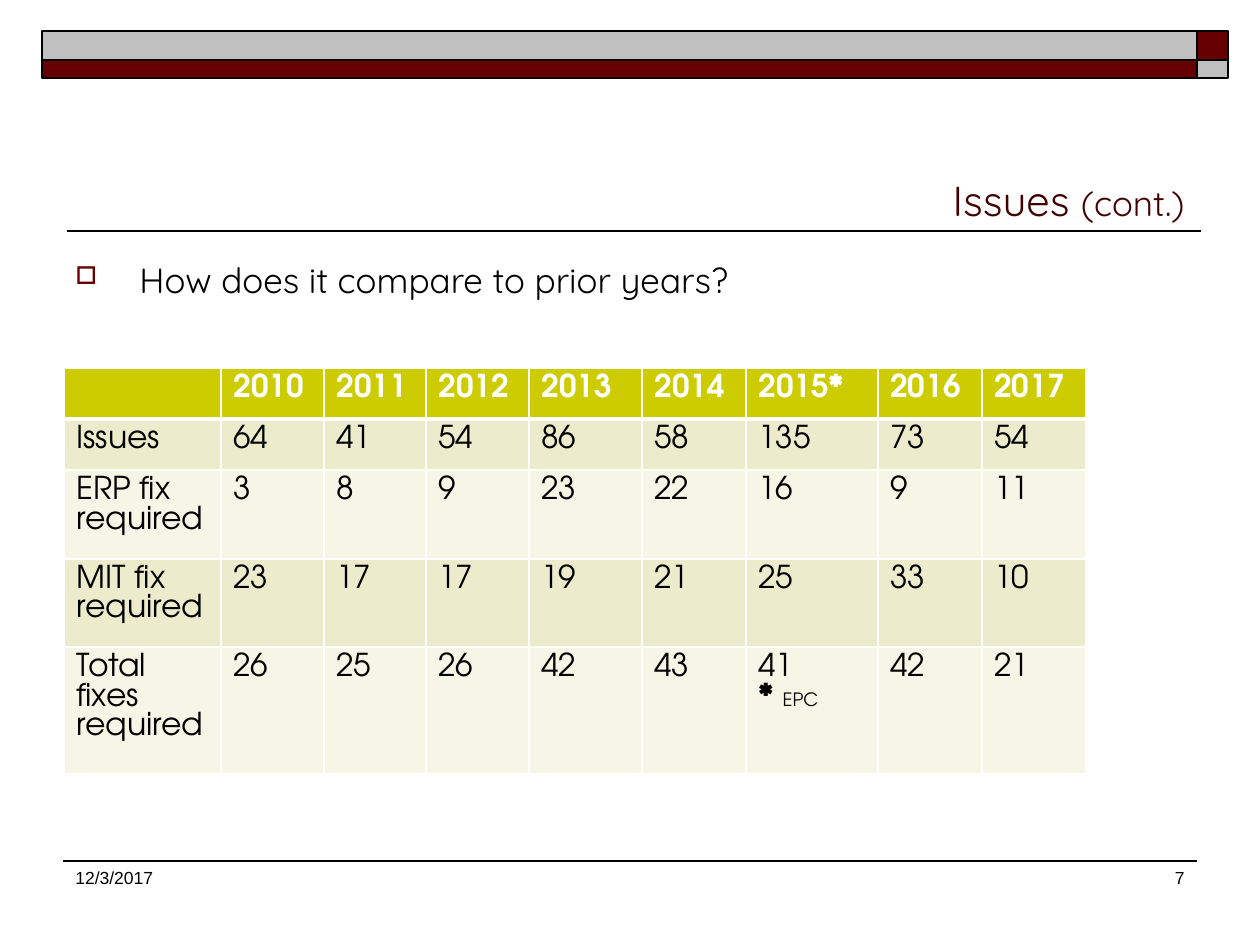
"""Build the slide that compares issues and fixes across years."""
from lxml.etree import SubElement
from pptx import Presentation
from pptx.dml.color import RGBColor
from pptx.enum.shapes import MSO_CONNECTOR, MSO_SHAPE
from pptx.enum.text import MSO_ANCHOR as Anchor, PP_ALIGN as Align
from pptx.oxml import parse_xml
from pptx.oxml.ns import nsdecls, qn
from pptx.util import Pt

PX = 914400 / 126
COLORS = {
    "maroon": "660000", "gray": "C0C0C0", "black": "000000", "white": "FFFFFF",
    "title": "420000", "header": "CCCC00", "odd": "ECECCC", "even": "F6F6E7",
}
HEADING = {"name": "Quicksand", "size": 24, "color": "title"}
BODY = {"name": "Quicksand", "size": 20, "color": "black"}
FOOTER = {"name": "Arial", "size": 10, "color": "black"}
CELL = {"name": "TeX Gyre Adventor", "size": 18, "color": "black", "bold": False}
HEADER = {**CELL, "color": "white", "bold": True}
NOTE = {**CELL, "size": 10.5}

BAND_X, BAND_Y = (42, 1197, 1228), (31, 60, 78)
BAND_FILLS = [("gray", "maroon"), ("maroon", "gray")]
RULES = [(67, 1201, 231, 1), (63, 1197, 861, 0.75)]
TEXTS = [
    ((63, 73, 1134, 158), Anchor.BOTTOM, Align.RIGHT,
     [("Issues ", HEADING), ("(cont.)", {**HEADING, "size": 20})]),
    ((63, 252, 1134, 592), Anchor.TOP, Align.LEFT,
     [("How does it compare to prior years?", BODY)]),
    ((63, 861, 231, 63), Anchor.TOP, Align.LEFT, [("12/3/2017", FOOTER)]),
    ((935, 861, 262, 63), Anchor.TOP, Align.RIGHT, [("7", FOOTER)]),
]
BULLETED = 1
TABLE_AT = (64, 368)
COLUMNS = [157, 103, 102, 103, 113, 104, 132, 104, 104]
ROWS = [51, 51, 89, 88, 125]
TABLE = [
    ["", "2010", "2011", "2012", "2013", "2014", "2015*", "2016", "2017"],
    ["Issues", "64", "41", "54", "86", "58", "135", "73", "54"],
    ["ERP fix required", "3", "8", "9", "23", "22", "16", "9", "11"],
    ["MIT fix required", "23", "17", "17", "19", "21", "25", "33", "10"],
    ["Total fixes required", "26", "25", "26", "42", "43", "41", "42", "21"],
]
FOOTNOTE_CELL = (4, 6)
FOOTNOTE = [("* ", {**CELL, "bold": True}), ("EPC", NOTE)]


def px(*values):
    return [round(value * PX) for value in values]


def rgb(name):
    return RGBColor.from_string(COLORS[name])


def add_runs(paragraph, runs):
    for text, style in runs:
        run = paragraph.add_run()
        run.text = text
        for key, value in style.items():
            if key == "color":
                run.font.color.rgb = rgb(value)
            else:
                setattr(run.font, key, Pt(value) if key == "size" else value)


def add_bullet(paragraph):
    properties = paragraph._p.get_or_add_pPr()
    indent = px(64)[0]
    properties.set("marL", str(indent))
    properties.set("indent", str(-indent))
    color = SubElement(properties, qn("a:buClr"))
    SubElement(color, qn("a:srgbClr"), val=COLORS["maroon"])
    SubElement(properties, qn("a:buSzPct"), val="70000")
    SubElement(properties, qn("a:buChar"), char="□")


def add_band(slide):
    for row, fills in enumerate(BAND_FILLS):
        for column, fill in enumerate(fills):
            left, top = BAND_X[column], BAND_Y[row]
            size = BAND_X[column + 1] - left, BAND_Y[row + 1] - top
            shape = slide.shapes.add_shape(MSO_SHAPE.RECTANGLE, *px(left, top, *size))
            shape.shadow.inherit = False
            shape.fill.solid()
            shape.fill.fore_color.rgb = rgb(fill)
            shape.line.color.rgb = rgb("black")
            shape.line.width = Pt(1)


def add_rule(slide, left, right, y, width):
    rule = slide.shapes.add_connector(MSO_CONNECTOR.STRAIGHT, *px(left, y, right, y))
    rule.line.color.rgb = rgb("black")
    rule.line.width = Pt(width)
    SubElement(rule._element.spPr, qn("a:effectLst"))


def add_text(slide, box, anchor, align, runs, bulleted):
    frame = slide.shapes.add_textbox(*px(*box)).text_frame
    frame.word_wrap = True
    frame.vertical_anchor = anchor
    paragraph = frame.paragraphs[0]
    paragraph.alignment = align
    if bulleted:
        add_bullet(paragraph)
    add_runs(paragraph, runs)


def set_borders(cell, row):
    widths = {"L": 1, "R": 1, "T": 3 if row == 1 else 1, "B": 3 if row == 0 else 1}
    properties = cell._tc.get_or_add_tcPr()
    for index, (side, width) in enumerate(widths.items()):
        properties.insert(index, parse_xml(
            f'<a:ln{side} {nsdecls("a")} w="{Pt(width)}"><a:solidFill>'
            f'<a:srgbClr val="{COLORS["white"]}"/></a:solidFill></a:ln{side}>'))


def add_issue_table(slide):
    box = px(*TABLE_AT, sum(COLUMNS), sum(ROWS))
    table = slide.shapes.add_table(len(ROWS), len(COLUMNS), *box).table
    for column, width in zip(table.columns, px(*COLUMNS)):
        column.width = width
    for row, height in zip(table.rows, px(*ROWS)):
        row.height = height
    for r, values in enumerate(TABLE):
        fill = "header" if r == 0 else "odd" if r % 2 else "even"
        for c, text in enumerate(values):
            cell = table.cell(r, c)
            cell.fill.solid()
            cell.fill.fore_color.rgb = rgb(fill)
            set_borders(cell, r)
            if text:
                style = CELL if r else HEADER
                add_runs(cell.text_frame.paragraphs[0], [(text, style)])
    add_runs(table.cell(*FOOTNOTE_CELL).text_frame.add_paragraph(), FOOTNOTE)


def main():
    presentation = Presentation()
    presentation.slide_width, presentation.slide_height = px(1260, 945)
    slide = presentation.slides.add_slide(presentation.slide_layouts[6])
    add_band(slide)
    for rule in RULES:
        add_rule(slide, *rule)
    for index, text in enumerate(TEXTS):
        add_text(slide, *text, bulleted=index == BULLETED)
    add_issue_table(slide)
    presentation.save("out.pptx")


if __name__ == "__main__":
    main()
